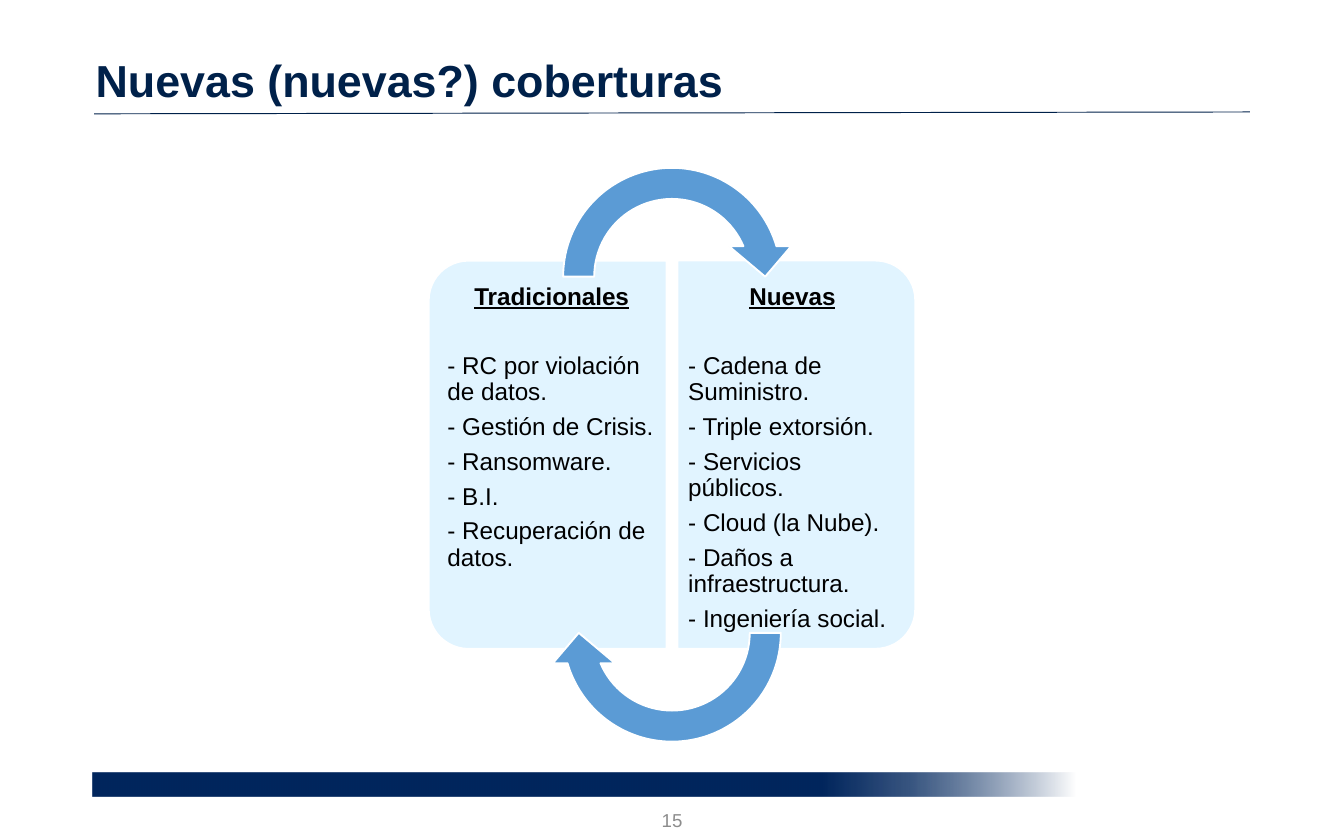
from lxml import etree
from pptx import Presentation
from pptx.dml.color import RGBColor
from pptx.enum.shapes import MSO_CONNECTOR, MSO_SHAPE
from pptx.enum.text import MSO_ANCHOR as Anchor, MSO_AUTO_SIZE, PP_ALIGN as Align
from pptx.oxml import parse_xml
from pptx.oxml.ns import nsdecls, qn
from pptx.util import Pt

THEME = {
    "font": "Arial",
    "navy": "00214A", "band": "00265D", "panel": "E1F4FF", "arrow": "5B9BD5",
    "white": "FFFFFF", "text": "000000", "muted": "8C8C8C",
    "title_size": 24, "body_size": 13, "number_size": 10,
}


def write_text(paragraph, text, size, color, paragraph_format, bold=False, underline=False):
    paragraph.text = text
    for name, value in paragraph_format.items():
        setattr(paragraph, name, value)
    font_format = {"name": THEME["font"], "size": Pt(THEME[size]), "bold": bold, "underline": underline}
    for name, value in font_format.items():
        setattr(paragraph.font, name, value)
    paragraph.font.color.rgb = RGBColor.from_string(THEME[color])


def style_shape(shape, color):
    shape.shadow.inherit = False
    shape.fill.solid()
    shape.fill.fore_color.rgb = RGBColor.from_string(THEME[color])
    shape.line.color.rgb = RGBColor.from_string(THEME["white"])
    shape.line.width = Pt(1)


prs = Presentation()
prs.slide_width, prs.slide_height = Pt(720), Pt(450)
slide = prs.slides.add_slide(prs.slide_layouts[3])
shapes = slide.shapes
title, *lists = slide.placeholders

footer_band = shapes.add_shape(MSO_SHAPE.RECTANGLE, Pt(49.5), Pt(414), Pt(526.5), Pt(12.8))
footer_band.shadow.inherit = False
footer_band.line.fill.background()
footer_band.fill.gradient()
footer_band.fill.gradient_angle = 0
stops = footer_band._element.spPr.find(qn("a:gradFill")).find(qn("a:gsLst"))
for stop in list(stops):
    stops.remove(stop)
for position, color, alpha in [(0, "band", 100), (74, "band", 100), (83, "band", 78), (100, "white", 100)]:
    stops.append(parse_xml(
        f'<a:gs {nsdecls("a")} pos="{position * 1000}"><a:srgbClr val="{THEME[color]}">'
        f'<a:alpha val="{alpha * 1000}"/></a:srgbClr></a:gs>'))

title_rule = shapes.add_connector(MSO_CONNECTOR.STRAIGHT, Pt(50.4), Pt(61), Pt(669.6), Pt(60))
title_rule.line.color.rgb = RGBColor.from_string(THEME["navy"])
title_rule.line.width = Pt(0.5)
etree.SubElement(title_rule._element.spPr, qn("a:effectLst"))

title_format = {"left": Pt(44), "top": Pt(14.4), "width": Pt(618.5), "height": Pt(46.8)}
for name, value in title_format.items():
    setattr(title, name, value)
title.text_frame.auto_size = MSO_AUTO_SIZE.NONE
title.text_frame.vertical_anchor = Anchor.BOTTOM
write_text(title.text_frame.paragraphs[0], "Nuevas (nuevas?) coberturas", "title_size", "navy",
           {"alignment": Align.LEFT, "line_spacing": 0.9}, bold=True)

page_number = shapes.add_textbox(Pt(308), Pt(429), Pt(104), Pt(21))
page_number.text_frame.word_wrap = True
page_number.text_frame.vertical_anchor = Anchor.MIDDLE
write_text(page_number.text_frame.paragraphs[0], "15", "number_size", "muted", {"alignment": Align.CENTER})

center_x, center_y = 360, 243.6
panel_length, panel_depth, panel_offset = 208, 127.4, 66.6
list_width, list_height, list_offset = 121, 195.8, 63.4
coverages = [
    ("Tradicionales", -1, 270, 3.6, 5.8,
     ["RC por violación de datos.", "Gestión de Crisis.", "Ransomware.", "B.I.", "Recuperación de datos."]),
    ("Nuevas", 1, 90, 5.8, 3.6,
     ["Cadena de Suministro.", "Triple extorsión.", "Servicios públicos.", "Cloud (la Nube).",
      "Daños a infraestructura.", "Ingeniería social."]),
]
for coverage_list, (heading, side, rotation, inset_left, inset_right, items) in zip(lists, coverages):
    panel = shapes.add_shape(
        MSO_SHAPE.ROUND_2_SAME_RECTANGLE, Pt(center_x + side * panel_offset - panel_length / 2),
        Pt(center_y - panel_depth / 2), Pt(panel_length), Pt(panel_depth))
    panel.rotation = rotation
    panel.adjustments[0] = 0.167
    style_shape(panel, "panel")

    shapes._spTree.append(coverage_list._element)
    list_format = {
        "left": Pt(center_x + side * list_offset - list_width / 2), "top": Pt(center_y - list_height / 2),
        "width": Pt(list_width), "height": Pt(list_height),
    }
    for name, value in list_format.items():
        setattr(coverage_list, name, value)
    frame = coverage_list.text_frame
    frame_format = {
        "margin_left": Pt(inset_left), "margin_right": Pt(inset_right), "margin_top": Pt(6.5),
        "margin_bottom": Pt(6.5), "word_wrap": True, "auto_size": MSO_AUTO_SIZE.NONE,
        "vertical_anchor": Anchor.TOP,
    }
    for name, value in frame_format.items():
        setattr(frame, name, value)
    for index, entry in enumerate([heading] + [f"- {item}" for item in items]):
        is_heading = index == 0
        paragraph = frame.paragraphs[0] if is_heading else frame.add_paragraph()
        properties = paragraph._p.get_or_add_pPr()
        properties.set("marL", "0")
        properties.set("indent", "0")
        etree.SubElement(properties, qn("a:buNone"))
        write_text(paragraph, entry, "body_size", "text", {
            "alignment": Align.CENTER if is_heading else Align.LEFT, "line_spacing": 0.9,
            "space_before": Pt(0), "space_after": Pt(23.2 if is_heading else 4.55),
        }, bold=is_heading, underline=is_heading)

arrow_size, arrow_offset = 133.2, 95.4
for side, rotation in [(-1, 0), (1, 180)]:
    cycle_arrow = shapes.add_shape(
        MSO_SHAPE.CIRCULAR_ARROW, Pt(center_x - arrow_size / 2),
        Pt(center_y + side * arrow_offset - arrow_size / 2), Pt(arrow_size), Pt(arrow_size))
    cycle_arrow.rotation = rotation
    for index, value in enumerate([0.125, 11.42, 204.58, 108, 0.125]):
        cycle_arrow.adjustments[index] = value
    style_shape(cycle_arrow, "arrow")

prs.save("out.pptx")
